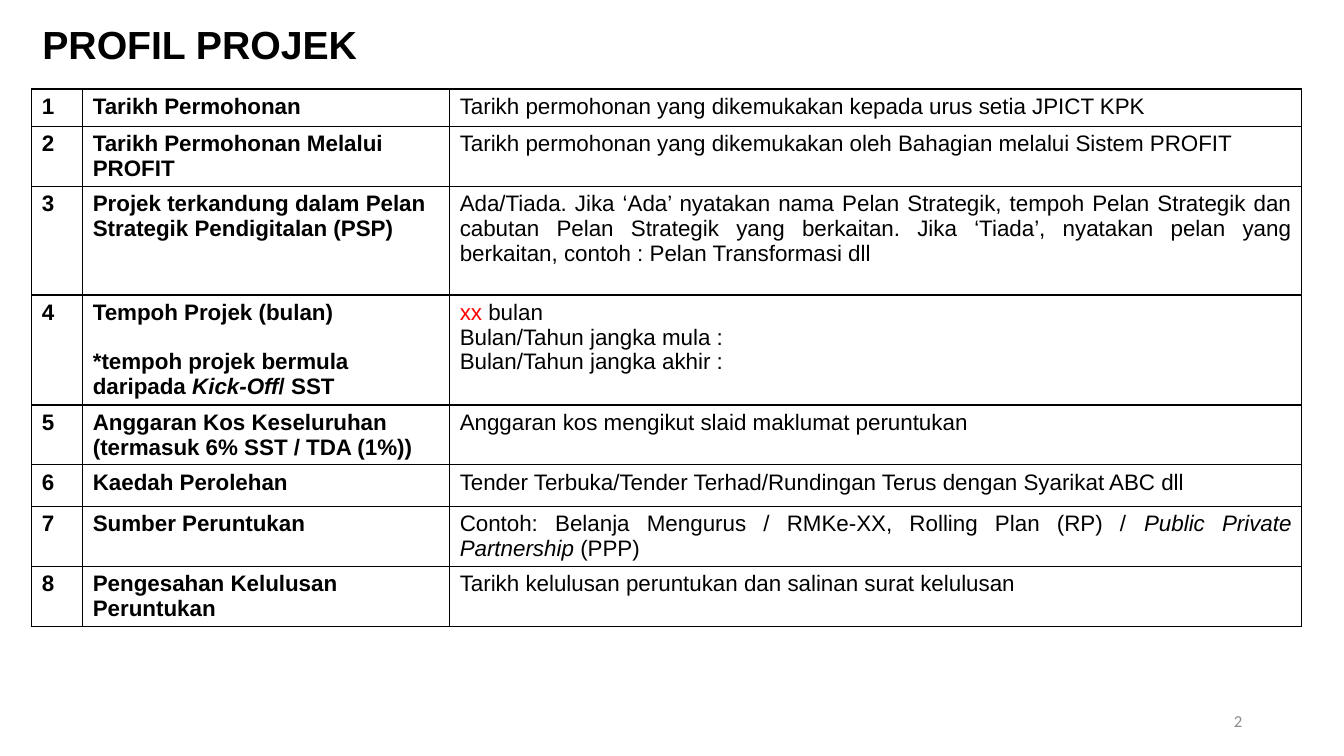
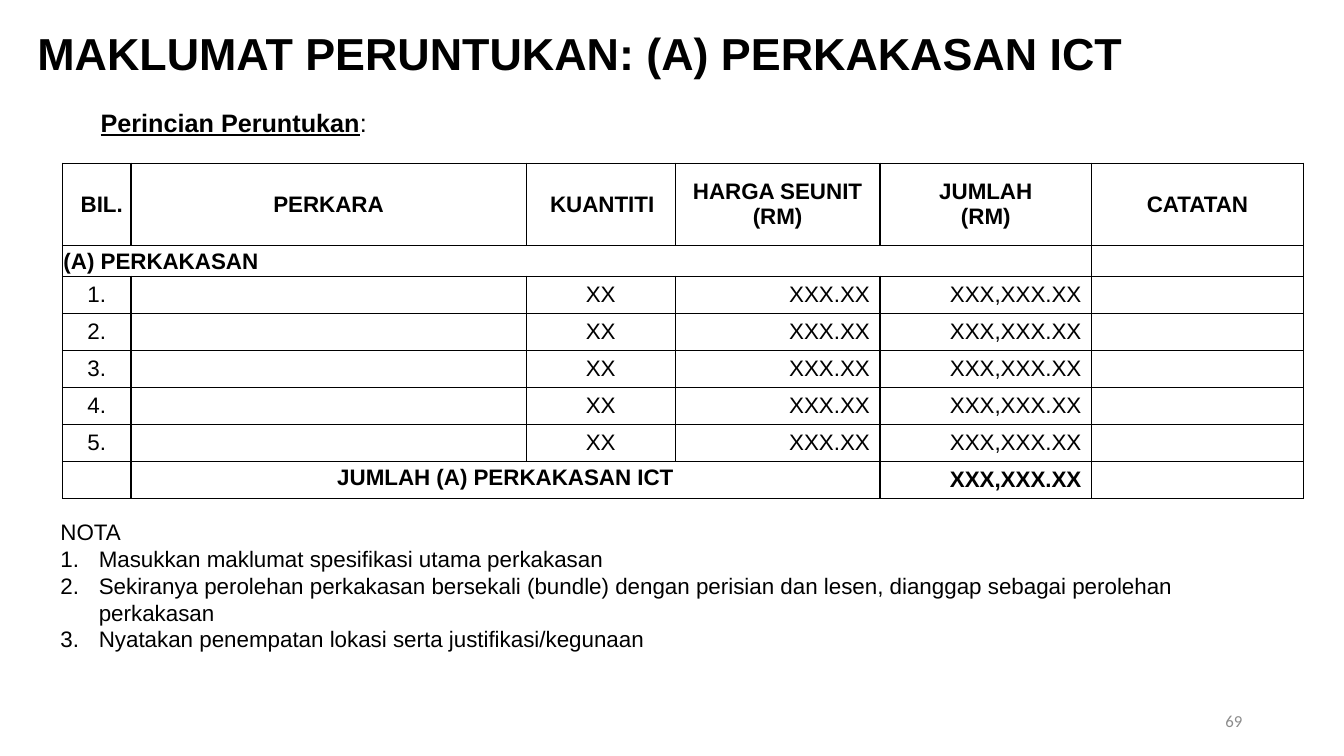
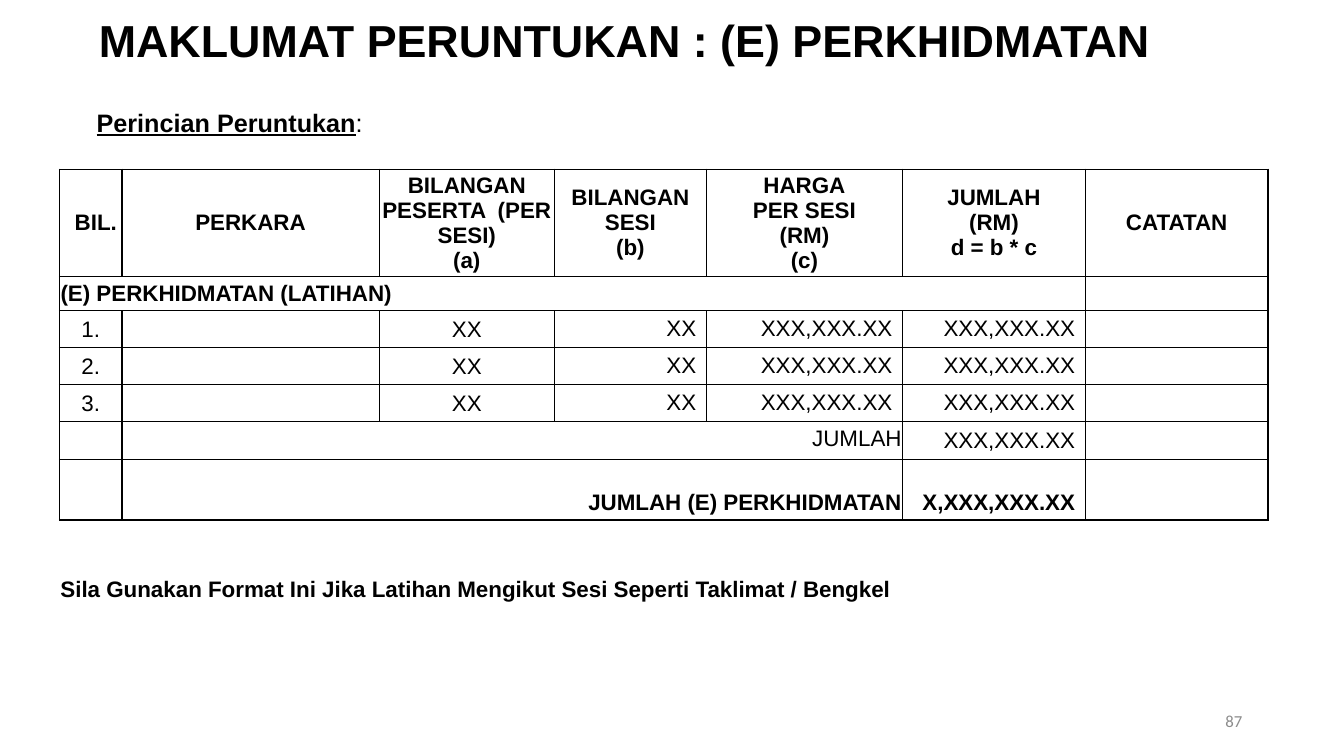
"""Builds three project application slides: a profile and two cost tables."""
import dataclasses
import typing

import lxml.etree
import pptx
import pptx.dml.color
import pptx.enum.text
import pptx.oxml.ns
import pptx.util

Align = pptx.enum.text.PP_ALIGN
Anchor = pptx.enum.text.MSO_ANCHOR
Insets = tuple[float, float, float, float]

PADDED: Insets = (0.1, 0.05, 0.1, 0.05)
TIGHT: Insets = (0.01, 0.01, 0.01, 0)
TOTAL: Insets = (0.01, 0.01, 0.01, 0.05)


@dataclasses.dataclass(frozen=True)
class Theme:
    """Colours, fonts and type sizes shared by the slides."""

    font: str = "Arial"
    number_font: str = "Calibri"
    ink: str = "000000"
    accent: str = "FF0000"
    muted: str = "8C8C8C"
    small_title: float = 28
    title: float = 32
    heading: float = 18
    text: float = 16
    number: float = 12
    border: float = 1
    indent: float = 0.38


THEME = Theme()


@dataclasses.dataclass(frozen=True)
class Box:
    """A place given in percent of the slide's width and height."""

    left: float
    top: float
    width: float
    height: float


@dataclasses.dataclass(frozen=True)
class Run:
    """A stretch of text with its own look."""

    text: str
    bold: bool = False
    italic: bool = False
    underline: bool = False
    color: str = THEME.ink


Para = typing.Union[str, tuple[Run, ...]]


@dataclasses.dataclass(frozen=True)
class Cell:
    """A table cell: its paragraphs, alignment, insets and column span."""

    paras: tuple[Para, ...] = ()
    bold: bool = False
    align: typing.Any = Align.LEFT
    anchor: typing.Any = Anchor.MIDDLE
    insets: Insets = TIGHT
    span: int = 1
    gap: float = 0


@dataclasses.dataclass(frozen=True)
class Table:
    """A table with columns and rows in percent of the slide."""

    left: float
    top: float
    cols: tuple[float, ...]
    rows: tuple[float, ...]
    cells: tuple[tuple[Cell, ...], ...]


@dataclasses.dataclass(frozen=True)
class Notes:
    """A lead line with an optional numbered list below it."""

    box: Box
    lead: str
    items: tuple[str, ...] = ()
    bold: bool = False


@dataclasses.dataclass(frozen=True)
class Page:
    """The content of one slide."""

    number: int
    title: str
    title_box: Box
    title_size: float
    table: Table
    heading_left: typing.Optional[float] = None
    notes: typing.Optional[Notes] = None


def across(prs, share: float) -> int:
    """Turns a percentage of the slide's width into a length."""
    return round(prs.slide_width * share / 100)


def down(prs, share: float) -> int:
    """Turns a percentage of the slide's height into a length."""
    return round(prs.slide_height * share / 100)


def place(prs, box: Box) -> tuple[int, int, int, int]:
    """Turns a box into left, top, width and height."""
    return (across(prs, box.left), down(prs, box.top),
            across(prs, box.width), down(prs, box.height))


def style(r, size: float, bold: bool = False, color: str = THEME.ink,
          font: str = THEME.font) -> None:
    """Sets the type of a run."""
    r.font.name = font
    r.font.size = pptx.util.Pt(size)
    r.font.bold = bold
    r.font.color.rgb = pptx.dml.color.RGBColor.from_string(color)


def write(p, content: Para, size: float, bold: bool = False) -> None:
    """Fills a paragraph with plain text or with styled runs."""
    if isinstance(content, str):
        p.text = content
        for r in p.runs:
            style(r, size, bold)
        return
    for part in content:
        r = p.add_run()
        r.text = part.text
        style(r, size, part.bold, part.color)
        r.font.italic = part.italic
        r.font.underline = part.underline


def set_list(p, numbered: bool) -> None:
    """Makes a paragraph a numbered item or a plain one."""
    p_pr = p._p.get_or_add_pPr()
    hang = int(pptx.util.Inches(THEME.indent)) if numbered else 0
    p_pr.set("marL", str(hang))
    p_pr.set("indent", str(-hang))
    tag = "a:buAutoNum" if numbered else "a:buNone"
    bullet = lxml.etree.SubElement(p_pr, pptx.oxml.ns.qn(tag))
    if numbered:
        bullet.set("type", "arabicPeriod")


def add_borders(cell) -> None:
    """Draws a thin line on all four sides of a cell."""
    tc_pr = cell._tc.get_or_add_tcPr()
    qn = pptx.oxml.ns.qn
    for side in "LRTB":
        ln = lxml.etree.SubElement(tc_pr, qn(f"a:ln{side}"))
        ln.set("w", str(int(pptx.util.Pt(THEME.border))))
        fill = lxml.etree.SubElement(ln, qn("a:solidFill"))
        lxml.etree.SubElement(fill, qn("a:srgbClr")).set("val", THEME.ink)


def fill_cell(cell, content: Cell) -> None:
    """Writes a cell's paragraphs and sets its margins."""
    cell.vertical_anchor = content.anchor
    (cell.margin_left, cell.margin_top, cell.margin_right,
     cell.margin_bottom) = map(pptx.util.Inches, content.insets)
    tf = cell.text_frame
    for i, para in enumerate(content.paras):
        p = tf.add_paragraph() if i else tf.paragraphs[0]
        p.alignment = content.align
        if i and content.gap:
            p.space_before = pptx.util.Pt(content.gap)
        write(p, para, THEME.text, content.bold)


def add_table(prs, s, table: Table) -> None:
    """Adds a bordered table without fills."""
    box = Box(table.left, table.top, sum(table.cols), sum(table.rows))
    grid = s.shapes.add_table(len(table.rows), len(table.cols), *place(prs, box)).table
    grid.first_row = grid.horz_banding = False
    for column, share in zip(grid.columns, table.cols):
        column.width = across(prs, share)
    for row, share in zip(grid.rows, table.rows):
        row.height = down(prs, share)
    for cell in grid.iter_cells():
        add_borders(cell)
        cell.fill.background()
        end = cell.text_frame.paragraphs[0]._p.get_or_add_endParaRPr()
        end.set("sz", str(round(THEME.text * 100)))
    for i, row in enumerate(table.cells):
        j = 0
        for content in row:
            cell = grid.cell(i, j)
            if content.span > 1:
                cell.merge(grid.cell(i, j + content.span - 1))
            fill_cell(cell, content)
            j += content.span


def add_line(prs, s, box: Box):
    """Adds a wrapping, middle-anchored text box and returns its paragraph."""
    tf = s.shapes.add_textbox(*place(prs, box)).text_frame
    tf.word_wrap = True
    tf.vertical_anchor = Anchor.MIDDLE
    return tf.paragraphs[0]


def move(prs, sp, box: Box, anchor):
    """Moves a placeholder and returns its text frame."""
    sp.left, sp.top, sp.width, sp.height = place(prs, box)
    tf = sp.text_frame
    tf.word_wrap = True
    tf.auto_size = pptx.enum.text.MSO_AUTO_SIZE.NONE
    tf.vertical_anchor = anchor
    return tf


def add_notes(prs, s, notes: Notes) -> None:
    """Writes the notes into the body placeholder."""
    tf = move(prs, s.placeholders[1], notes.box, Anchor.TOP)
    for i, text in enumerate((notes.lead, *notes.items)):
        p = tf.add_paragraph() if i else tf.paragraphs[0]
        p.space_before = pptx.util.Pt(0)
        set_list(p, i > 0)
        write(p, text, THEME.text, notes.bold)


def add_page(prs, page: Page) -> None:
    """Adds one slide with title, table, notes and number."""
    s = prs.slides.add_slide(prs.slide_layouts[1 if page.notes else 5])
    p = move(prs, s.shapes.title, page.title_box, Anchor.MIDDLE).paragraphs[0]
    p.alignment = Align.LEFT
    write(p, page.title, page.title_size, True)
    if page.heading_left is not None:
        p = add_line(prs, s, Box(page.heading_left, 13.47, 62.64, 5.33))
        write(p, (Run("Perincian Peruntukan", bold=True, underline=True), Run(":")),
              THEME.heading)
    add_table(prs, s, page.table)
    if page.notes:
        add_notes(prs, s, page.notes)
    p = add_line(prs, s, Box(70.67, 92.67, 22.5, 5.33))
    p.alignment = Align.RIGHT
    p.text = str(page.number)
    style(p.runs[0], THEME.number, color=THEME.muted, font=THEME.number_font)


def profile_row(number: int, label: tuple[Para, ...], detail: tuple[Para, ...],
                justified: bool = False) -> tuple[Cell, ...]:
    """Builds a row of number, label and detail."""
    top = Cell(anchor=Anchor.TOP, insets=PADDED)
    return (dataclasses.replace(top, paras=(str(number),), bold=True),
            dataclasses.replace(top, paras=label, bold=True,
                                gap=THEME.text * 1.1 if number == 4 else 0),
            dataclasses.replace(top, paras=detail,
                                align=Align.JUSTIFY if justified else Align.LEFT))


def header(*labels: str) -> tuple[Cell, ...]:
    """Builds a header row; a bar in a label starts a new paragraph."""
    nudges = {"BIL.": 0.1, "KUANTITI": 0.03}
    return tuple(Cell(tuple(label.split("|")), True, Align.CENTER,
                      insets=(nudges.get(label, 0), 0, 0, 0)) for label in labels)


def section(label: str, span: int) -> tuple[Cell, ...]:
    """Builds a section row that leaves the last column free."""
    return Cell((label,), True, span=span), Cell()


def item_rows(count: int, *amounts: str) -> tuple[tuple[Cell, ...], ...]:
    """Builds numbered rows with a centred quantity and right-aligned amounts."""
    values = tuple(Cell((a,), align=Align.RIGHT, insets=PADDED) for a in amounts)
    return tuple((Cell((f"{n}.",), align=Align.CENTER), Cell(),
                  Cell(("XX",), align=Align.CENTER), *values, Cell())
                 for n in range(1, count + 1))


def total(label: str, amount: str, span: int, align, bold: bool = True,
          anchor=Anchor.MIDDLE) -> tuple[Cell, ...]:
    """Builds a total row."""
    return (Cell(), Cell((label,), bold, align, anchor, TOTAL, span),
            Cell((amount,), bold, Align.RIGHT, anchor, PADDED), Cell())


PROFILE = Table(
    2.36, 11.77, (3.8, 27.3, 63.4),
    (4.93, 7.9, 14.4, 14.55, 7.9, 5.5, 7.9, 7.9),
    (
        profile_row(1, ("Tarikh Permohonan",),
                    ("Tarikh permohonan yang dikemukakan kepada urus setia JPICT KPK",)),
        profile_row(2, ("Tarikh Permohonan Melalui PROFIT",),
                    ("Tarikh permohonan yang dikemukakan oleh Bahagian melalui Sistem PROFIT",)),
        profile_row(3, ("Projek terkandung dalam Pelan Strategik Pendigitalan (PSP)",),
                    ("Ada/Tiada. Jika ‘Ada’ nyatakan nama Pelan Strategik, tempoh Pelan "
                     "Strategik dan cabutan Pelan Strategik yang berkaitan. Jika ‘Tiada’, "
                     "nyatakan pelan yang berkaitan, contoh : Pelan Transformasi dll",), True),
        profile_row(4, ("Tempoh Projek (bulan)",
                        (Run("*tempoh projek bermula daripada ", True),
                         Run("Kick-Off", True, True), Run("/ SST", True))),
                    ((Run("xx ", color=THEME.accent), Run("bulan")),
                     "Bulan/Tahun jangka mula :", "Bulan/Tahun jangka akhir :")),
        profile_row(5, ("Anggaran Kos Keseluruhan", "(termasuk 6% SST / TDA (1%))"),
                    ("Anggaran kos mengikut slaid maklumat peruntukan",)),
        profile_row(6, ("Kaedah Perolehan",),
                    ("Tender Terbuka/Tender Terhad/Rundingan Terus dengan Syarikat ABC dll",),
                    True),
        profile_row(7, ("Sumber Peruntukan",),
                    ((Run("Contoh: Belanja Mengurus / RMKe-XX, Rolling Plan (RP) / "),
                      Run("Public Private Partnership ", italic=True), Run("(PPP)")),), True),
        profile_row(8, ("Pengesahan Kelulusan Peruntukan",),
                    ("Tarikh kelulusan peruntukan dan salinan surat kelulusan",)),
    ))

HARDWARE = Table(
    4.65, 21.6, (5.1, 29.4, 11.1, 15.23, 15.75, 15.75), (10.85, 4.1) + (4.64,) * 6,
    (
        header("BIL.", "PERKARA", "KUANTITI", "HARGA SEUNIT|(RM)", "JUMLAH|(RM)", "CATATAN"),
        section("(A) PERKAKASAN", 5),
        *item_rows(5, "XXX.XX", "XXX,XXX.XX"),
        total("JUMLAH (A) PERKAKASAN ICT", "XXX,XXX.XX", 3, Align.CENTER),
    ))

SERVICES = Table(
    4.43, 22.4, (4.65, 19.13, 13.05, 11.3, 14.6, 13.6, 13.6),
    (13.5, 4.47) + (4.8,) * 3 + (5.07, 7.95),
    (
        header("BIL.", "PERKARA", "BILANGAN PESERTA  (PER SESI)|(a)", "BILANGAN SESI|(b)",
               "HARGA|PER SESI|(RM)|(c)", "JUMLAH|(RM)|d = b * c", "CATATAN"),
        section("(E) PERKHIDMATAN (LATIHAN)", 6),
        *item_rows(3, "XX", "XXX,XXX.XX", "XXX,XXX.XX"),
        total("JUMLAH", "XXX,XXX.XX", 4, Align.RIGHT, bold=False),
        total("JUMLAH (E) PERKHIDMATAN", "X,XXX,XXX.XX", 4, Align.RIGHT, anchor=Anchor.BOTTOM),
    ))

PAGES = (
    Page(2, "PROFIL PROJEK", Box(2.4, 2.13, 74.2, 7.33), THEME.small_title, PROFILE),
    Page(69, "MAKLUMAT PERUNTUKAN: (A) PERKAKASAN ICT", Box(2.03, 2.67, 86.27, 8.67),
         THEME.title, HARDWARE, 6.75,
         Notes(Box(3.75, 67.87, 87.25, 22.93), "NOTA", (
             "Masukkan maklumat spesifikasi utama perkakasan",
             "Sekiranya perolehan perkakasan bersekali (bundle) dengan perisian dan lesen, "
             "dianggap sebagai perolehan perkakasan",
             "Nyatakan penempatan lokasi serta justifikasi/kegunaan"))),
    Page(87, "MAKLUMAT PERUNTUKAN : (E) PERKHIDMATAN", Box(6.6, 0.93, 86.5, 8.67),
         THEME.title, SERVICES, 6.45,
         Notes(Box(3.75, 75.47, 85.45, 4.93),
               "Sila Gunakan Format Ini Jika Latihan Mengikut Sesi Seperti Taklimat / Bengkel",
               bold=True)),
)


def main() -> None:
    """Builds and saves the presentation."""
    prs = pptx.Presentation()
    prs.slide_width = pptx.util.Inches(13.33)
    prs.slide_height = pptx.util.Inches(7.5)
    for page in PAGES:
        add_page(prs, page)
    prs.save("out.pptx")


if __name__ == "__main__":
    main()
